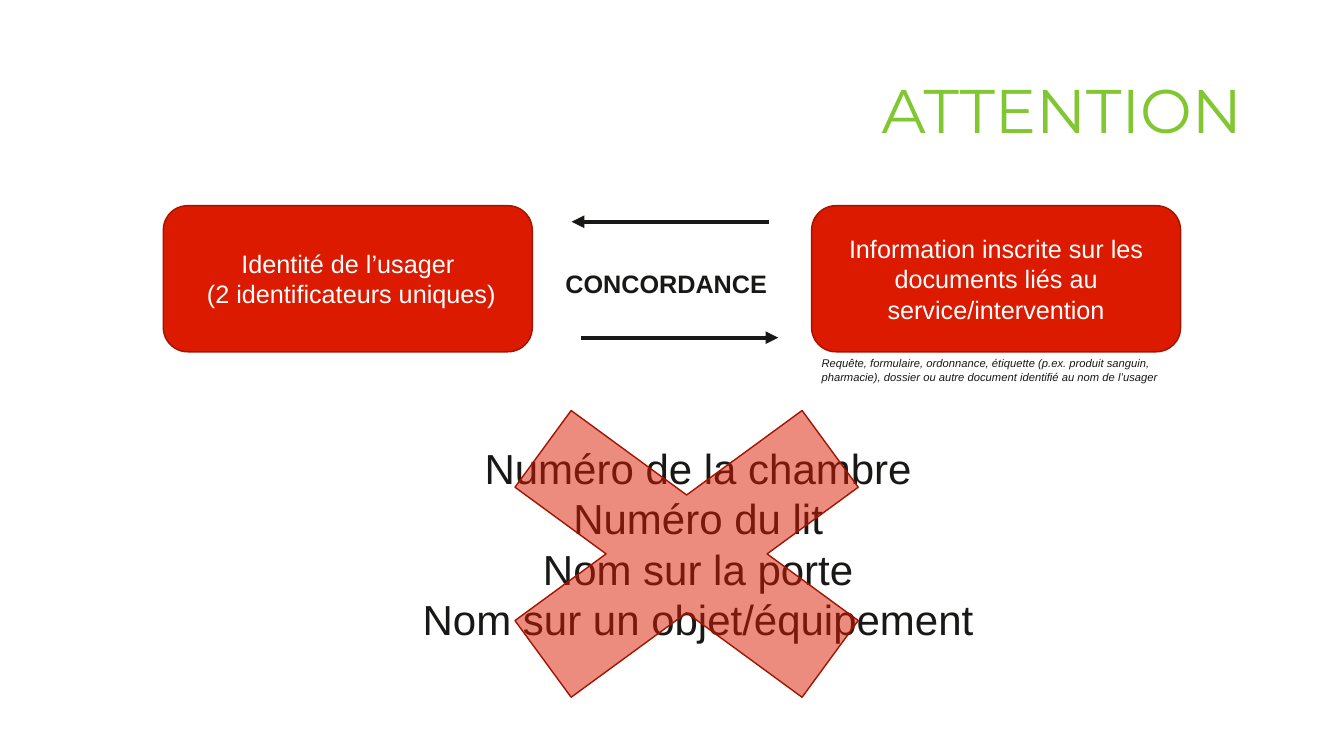
"""Build the ATTENTION slide on matching a user's identity with documents."""
from dataclasses import dataclass

from lxml import etree
from pptx import Presentation
from pptx.dml.color import RGBColor
from pptx.enum import shapes, text
from pptx.oxml import ns
from pptx.util import Inches, Pt


@dataclass(frozen=True)
class Theme:
    """Hold the colours, fonts and type sizes of the slide."""

    red: str = "DB1A00"
    outline: str = "A21300"
    green: str = "81C731"
    ink: str = "181817"
    white: str = "FFFFFF"
    body_font: str = "Arial"
    title_font: str = "Montserrat"
    title_size: int = 44
    list_size: int = 30
    label_size: int = 18
    note_size: int = 8


THEME = Theme()
LEFT, CENTER, RIGHT = text.PP_ALIGN.LEFT, text.PP_ALIGN.CENTER, text.PP_ALIGN.RIGHT
TOP, MIDDLE = text.MSO_ANCHOR.TOP, text.MSO_ANCHOR.MIDDLE


def write_text(shape, lines, size, color=THEME.ink, align=LEFT, anchor=TOP,
               line_spacing=None, **font_values):
    """Fill a shape with one formatted paragraph per line."""
    frame = shape.text_frame
    frame.word_wrap = True
    frame.vertical_anchor = anchor
    frame.text = "\n".join(lines)
    font_format = {"name": THEME.body_font, "size": Pt(size), **font_values}
    for paragraph in frame.paragraphs:
        paragraph.alignment = align
        paragraph.line_spacing = line_spacing
        font = paragraph.runs[0].font
        for attribute, value in font_format.items():
            setattr(font, attribute, value)
        font.color.rgb = RGBColor.from_string(color)


def add_label(slide, box, lines, size, **format_values):
    """Add a text box with formatted lines."""
    shape = slide.shapes.add_textbox(*map(Inches, box))
    write_text(shape, lines, size, **format_values)


def add_red_shape(slide, kind, box):
    """Add a red preset shape with a dark red outline."""
    shape = slide.shapes.add_shape(kind, *map(Inches, box))
    shape.shadow.inherit = False
    shape.fill.solid()
    shape.fill.fore_color.rgb = RGBColor.from_string(THEME.red)
    shape.line.color.rgb = RGBColor.from_string(THEME.outline)
    shape.line.width = Pt(1)
    return shape


def add_card(slide, left, lines):
    """Add a rounded red card with centred white text."""
    card = add_red_shape(slide, shapes.MSO_SHAPE.ROUNDED_RECTANGLE,
                         (left, 2.04, 3.66, 1.45))
    write_text(card, lines, THEME.label_size, color=THEME.white,
               align=CENTER, anchor=MIDDLE)


def add_arrow(slide, start, end, top):
    """Add a horizontal arrow pointing at its end."""
    arrow = slide.shapes.add_connector(
        shapes.MSO_CONNECTOR.STRAIGHT, *map(Inches, (start, top, end, top)))
    arrow.line.color.rgb = RGBColor.from_string(THEME.ink)
    arrow.line.width = Pt(3)
    properties = arrow.element.spPr
    etree.SubElement(properties.find(ns.qn("a:ln")), ns.qn("a:tailEnd"), type="triangle")
    etree.SubElement(properties, ns.qn("a:effectLst"))


def add_cross(slide, box):
    """Add a half transparent red cross."""
    cross = add_red_shape(slide, shapes.MSO_SHAPE.MATH_MULTIPLY, box)
    color = cross.element.spPr.find(ns.qn("a:solidFill"))[0]
    etree.SubElement(color, ns.qn("a:alpha"), val="50000")


def main():
    """Build and save the slide."""
    presentation = Presentation()
    presentation.slide_width = Inches(13.33)
    presentation.slide_height = Inches(7.5)
    slide = presentation.slides.add_slide(presentation.slide_layouts[6])

    add_label(slide, (1.94, 0.4, 10.48, 1.45), ["ATTENTION"], THEME.title_size,
              color=THEME.green, align=RIGHT, anchor=MIDDLE, line_spacing=0.9,
              name=THEME.title_font)
    add_card(slide, 1.62, ["Identité de l’usager", " (2 identificateurs uniques)"])
    add_card(slide, 8.05, ["Information inscrite sur les documents liés au "
                           "service/intervention"])
    add_label(slide, (5.51, 2.61, 2.72, 0.76), ["CONCORDANCE"],
              THEME.label_size, bold=True)
    add_arrow(slide, 7.63, 5.67, 2.2)
    add_arrow(slide, 5.76, 7.72, 3.35)
    add_label(slide, (4.07, 4.34, 5.71, 2.63),
              ["Numéro de la chambre", "Numéro du lit", "Nom sur la porte",
               "Nom sur un objet/équipement"], THEME.list_size, align=CENTER)
    add_cross(slide, (4.07, 3.49, 5.48, 4.01))
    add_label(slide, (8.05, 3.49, 3.66, 0.37),
              ["Requête, formulaire, ordonnance, étiquette (p.ex. produit sanguin, "
               "pharmacie), dossier ou autre document identifié au nom de l’usager"],
              THEME.note_size, italic=True)

    presentation.save("out.pptx")


if __name__ == "__main__":
    main()
